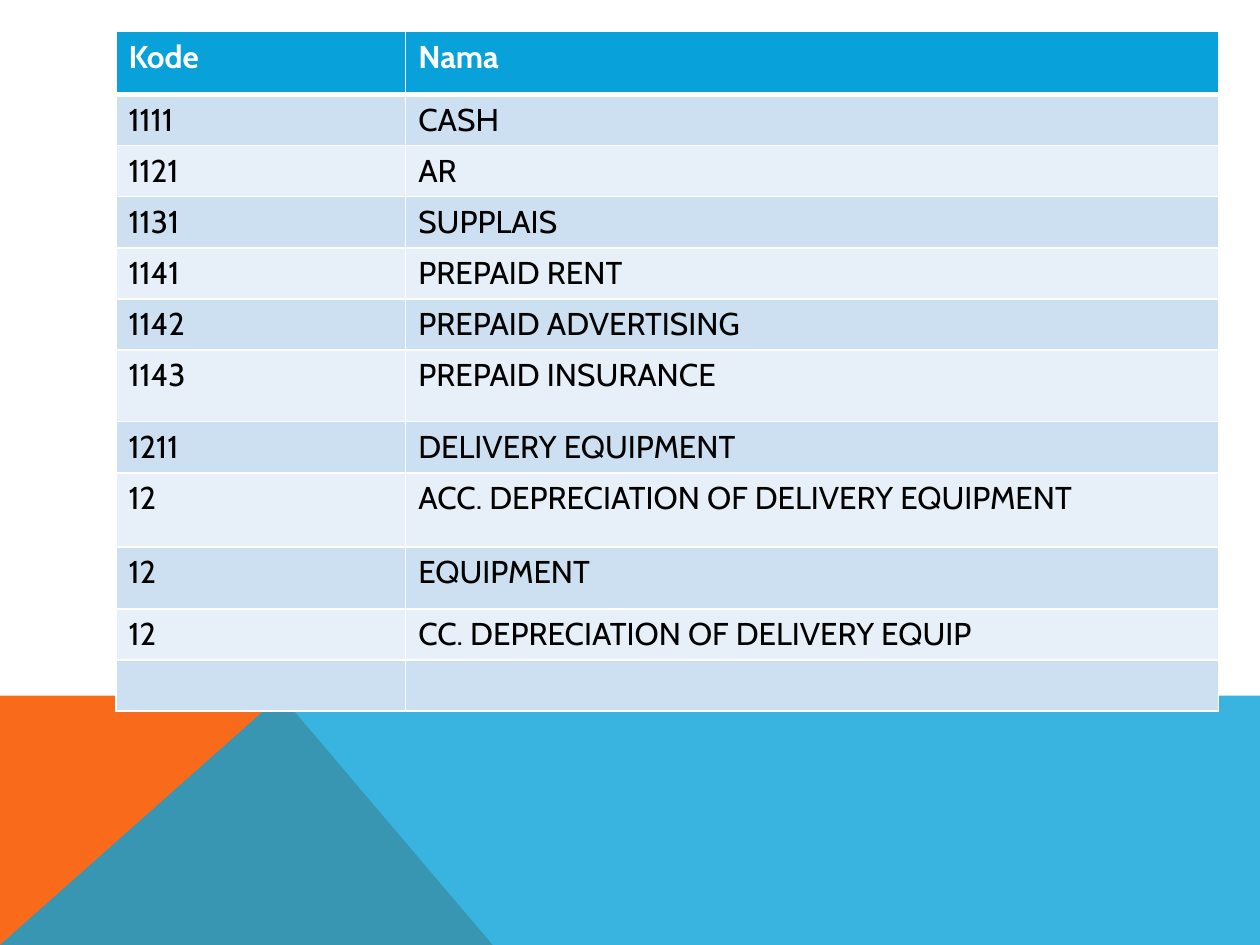
from pptx import Presentation
from pptx.dml.color import RGBColor as RGB
from pptx.oxml import parse_xml as to_xml
from pptx.oxml.ns import nsdecls, qn
from pptx.util import Inches, Pt
from lxml.etree import SubElement as Sub

WHITE = RGB(0xFF, 0xFF, 0xFF)
BLACK = RGB(0x00, 0x00, 0x00)
BLUE = RGB(0x08, 0xA1, 0xD9)
ORANGE = RGB(0xF9, 0x6A, 0x1B)
BANDS = [RGB(0xCC, 0xE0, 0xF1), RGB(0xE7, 0xF0, 0xF8)]

ROWS = [
    ("Kode", "Nama"),
    ("1111", "CASH"),
    ("1121", "AR"),
    ("1131", "SUPPLAIS"),
    ("1141", "PREPAID RENT"),
    ("1142", "PREPAID ADVERTISING"),
    ("1143", "PREPAID INSURANCE"),
    ("1211", "DELIVERY EQUIPMENT"),
    ("12", "ACC. DEPRECIATION OF DELIVERY EQUIPMENT"),
    ("12", "EQUIPMENT"),
    ("12", "CC. DEPRECIATION OF DELIVERY EQUIP"),
    ("", ""),
]
WIDTHS = [2.3, 6.45]
ROW_H = 0.4
TALL = {0: 0.5, 6: 0.57, 8: 0.59, 9: 0.49}  # rows with their own height


def write(frame, text, size=18, color=BLACK, bold=False, font="Cabin"):
    if not text:
        return
    run = frame.paragraphs[0].add_run()
    run.text = text
    run.font.name = font
    run.font.size = Pt(size)
    run.font.bold = bold
    run.font.color.rgb = color


class Deck:
    def __init__(self, width, height):
        self.prs = Presentation()
        self.prs.slide_width = Inches(width)
        self.prs.slide_height = Inches(height)
        self.slide = self.prs.slides.add_slide(self.prs.slide_layouts[6])

    def shape(self, points, color, alpha=None):
        first, *rest = [(Inches(x), Inches(y)) for x, y in points]
        pen = self.slide.shapes.build_freeform(*first)
        pen.add_line_segments(rest, close=True)
        form = pen.convert_to_shape()
        form.shadow.inherit = False
        form.line.fill.background()
        form.fill.solid()
        form.fill.fore_color.rgb = color
        if alpha is not None:
            tint = form.fill._xPr.find(".//" + qn("a:srgbClr"))
            Sub(tint, qn("a:alpha"), val=str(alpha * 1000))

    def border(self, cell, top=1, bottom=1):
        props = cell._tc.get_or_add_tcPr()
        for side, pts in zip("LRTB", (1, 1, top, bottom)):
            props.append(to_xml(
                f'<a:ln{side} {nsdecls("a")} w="{Pt(pts)}"><a:solidFill>'
                f'<a:srgbClr val="{WHITE}"/></a:solidFill></a:ln{side}>'))

    def table(self, left, top, rows, widths, heights):
        grid = self.slide.shapes.add_table(
            len(rows), len(widths), Inches(left), Inches(top),
            Inches(sum(widths)), Inches(sum(heights))).table
        for col, width in zip(grid.columns, widths):
            col.width = Inches(width)
        for r, (row, height) in enumerate(zip(rows, heights)):
            grid.rows[r].height = Inches(height)
            head = r == 0
            for c, text in enumerate(row):
                cell = grid.cell(r, c)
                self.border(cell, top=3 if r == 1 else 1,
                            bottom=3 if head else 1)
                cell.fill.solid()
                cell.fill.fore_color.rgb = BLUE if head else BANDS[(r - 1) % 2]
                write(cell.text_frame, text, bold=head,
                      color=WHITE if head else BLACK)

    def save(self):
        self.prs.save("out.pptx")


def main():
    deck = Deck(10, 7.5)

    # Footer bands
    deck.shape([(0, 7.5), (0, 5.52), (2.23, 5.52), (3.91, 7.5)], ORANGE)
    deck.shape([(0, 7.5), (2.23, 5.52), (10, 5.52), (10, 7.5)], BLUE, alpha=80)

    # Account table
    heights = [TALL.get(r, ROW_H) for r in range(len(ROWS))]
    deck.table(0.92, 0.25, ROWS, WIDTHS, heights)

    deck.save()


if __name__ == "__main__":
    main()
